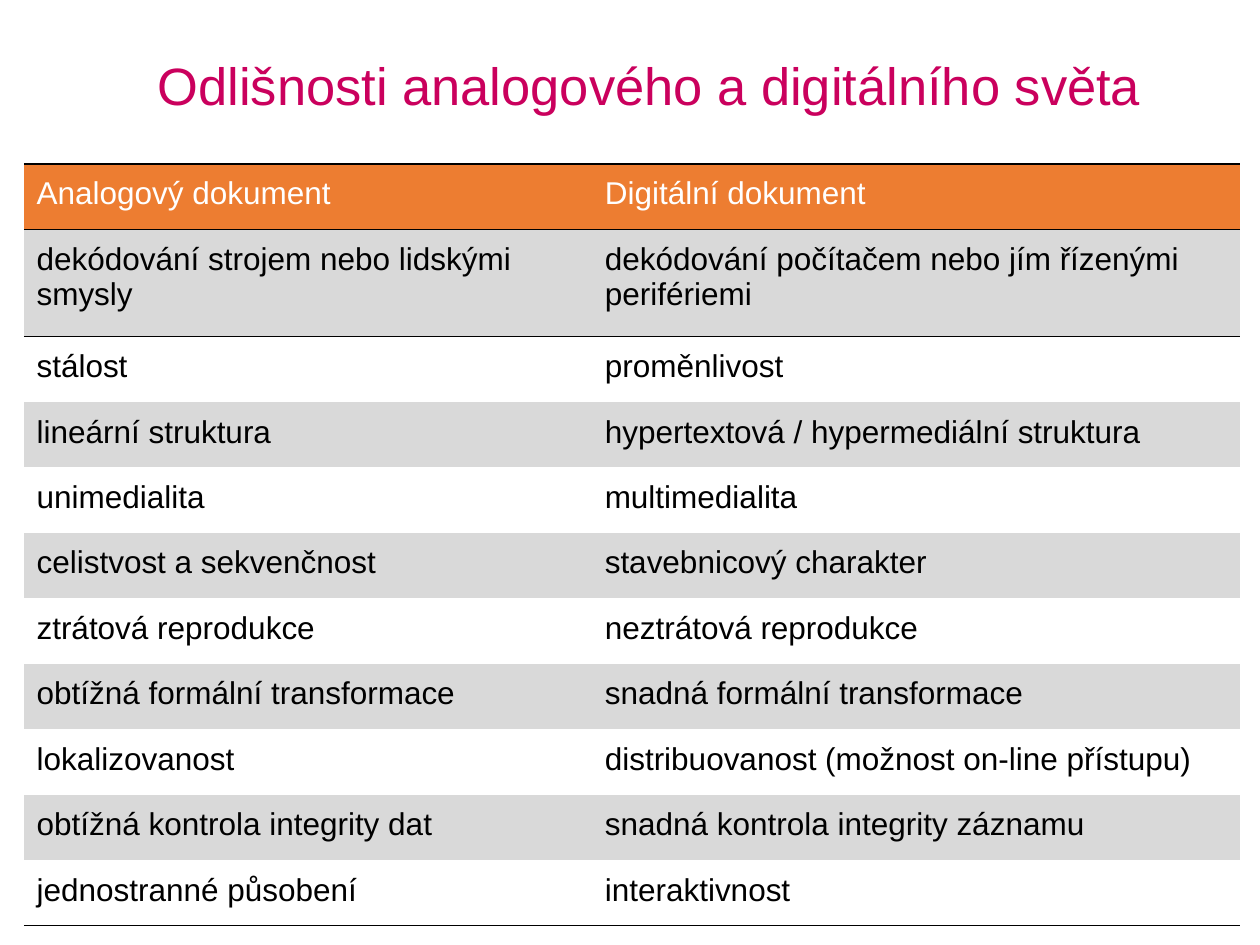
from lxml.etree import SubElement
from pptx import Presentation
from pptx.dml.color import RGBColor
from pptx.enum.text import MSO_ANCHOR, PP_ALIGN
from pptx.oxml.ns import qn
from pptx.util import Inches, Pt

COLORS = {"title": "CA005D", "header": "ED7D31", "band": "D9D9D9",
          "text": "000000", "header_text": "FFFFFF", "rule": "000000"}
FONT = "Arial"
INSET = Inches(0.1)
COLUMN_WIDTHS = (4.51, 5.14)
ROW_HEIGHT, TALL_ROW_HEIGHT = 0.52, 0.85
TALL_ROW = 1
RULED_BELOW = (0, 1, 10)
ROWS = [
    ("Analogový dokument", "Digitální dokument"),
    ("dekódování strojem nebo lidskými smysly",
     "dekódování počítačem nebo jím řízenými perifériemi"),
    ("stálost", "proměnlivost"),
    ("lineární struktura", "hypertextová / hypermediální struktura"),
    ("unimedialita", "multimedialita"),
    ("celistvost a sekvenčnost", "stavebnicový charakter"),
    ("ztrátová reprodukce", "neztrátová reprodukce"),
    ("obtížná formální transformace", "snadná formální transformace"),
    ("lokalizovanost", "distribuovanost (možnost on-line přístupu)"),
    ("obtížná kontrola integrity dat", "snadná kontrola integrity záznamu"),
    ("jednostranné působení", "interaktivnost"),
]


def color(name):
    return RGBColor.from_string(COLORS[name])


def format_text(frame, size, color_name):
    para = frame.paragraphs[0]
    para.alignment = PP_ALIGN.LEFT
    for span in para.runs:
        span.font.name = FONT
        span.font.size = Pt(size)
        span.font.bold = False
        span.font.color.rgb = color(color_name)


def set_insets(box):
    box.margin_left = box.margin_right = INSET
    box.margin_top = box.margin_bottom = INSET


def add_title(page, text):
    title = page.shapes.title
    title.left, title.top = Inches(1.15), Inches(0.22)
    title.width, title.height = Inches(8.51), Inches(0.9)
    frame = title.text_frame
    frame.text = text
    frame.vertical_anchor = MSO_ANCHOR.MIDDLE
    set_insets(frame)
    format_text(frame, 30, "title")


def set_borders(cell, ruled_sides):
    """Rule the given sides (T, B) and clear the other ones."""
    properties = cell._tc.get_or_add_tcPr()
    for index, side in enumerate("LRTB"):
        line = SubElement(properties, qn(f"a:ln{side}"), w=str(Pt(1)))
        if side in ruled_sides:
            fill = SubElement(line, qn("a:solidFill"))
            SubElement(fill, qn("a:srgbClr"), val=COLORS["rule"])
        else:
            SubElement(line, qn("a:noFill"))
        properties.insert(index, line)


def fill_cell(cell, text, row):
    cell.text = text
    set_insets(cell)
    format_text(cell.text_frame, 18, "text" if row else "header_text")
    if row == 0 or row % 2:
        cell.fill.solid()
        cell.fill.fore_color.rgb = color("band" if row else "header")
    else:
        cell.fill.background()
    ruled_above = row == 0 or row - 1 in RULED_BELOW
    set_borders(cell, "T" * ruled_above + "B" * (row in RULED_BELOW))


def add_comparison_table(page):
    heights = [TALL_ROW_HEIGHT if row == TALL_ROW else ROW_HEIGHT
               for row in range(len(ROWS))]
    table = page.shapes.add_table(
        len(ROWS), len(COLUMN_WIDTHS), Inches(0.19), Inches(1.3),
        Inches(sum(COLUMN_WIDTHS)), Inches(sum(heights))).table
    table.horz_banding = False
    table.first_row = False
    for column, width in zip(table.columns, COLUMN_WIDTHS):
        column.width = Inches(width)
    for row, (texts, height) in enumerate(zip(ROWS, heights)):
        table.rows[row].height = Inches(height)
        for column, text in enumerate(texts):
            fill_cell(table.cell(row, column), text, row)


def main():
    deck = Presentation()
    deck.slide_width, deck.slide_height = Inches(10), Inches(7.5)
    page = deck.slides.add_slide(deck.slide_layouts[5])
    add_title(page, "Odlišnosti analogového a digitálního světa")
    add_comparison_table(page)
    deck.save("out.pptx")


if __name__ == "__main__":
    main()
